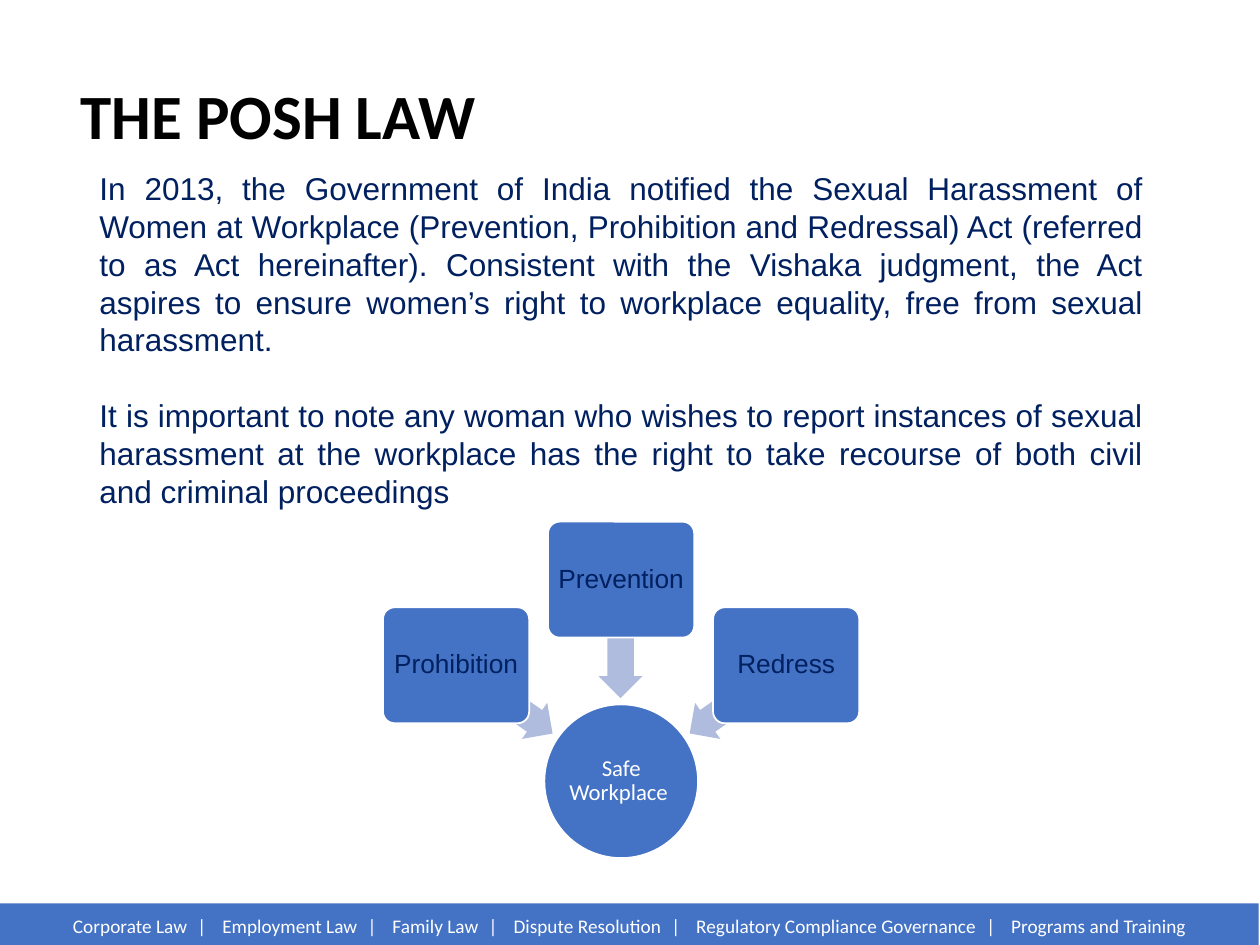
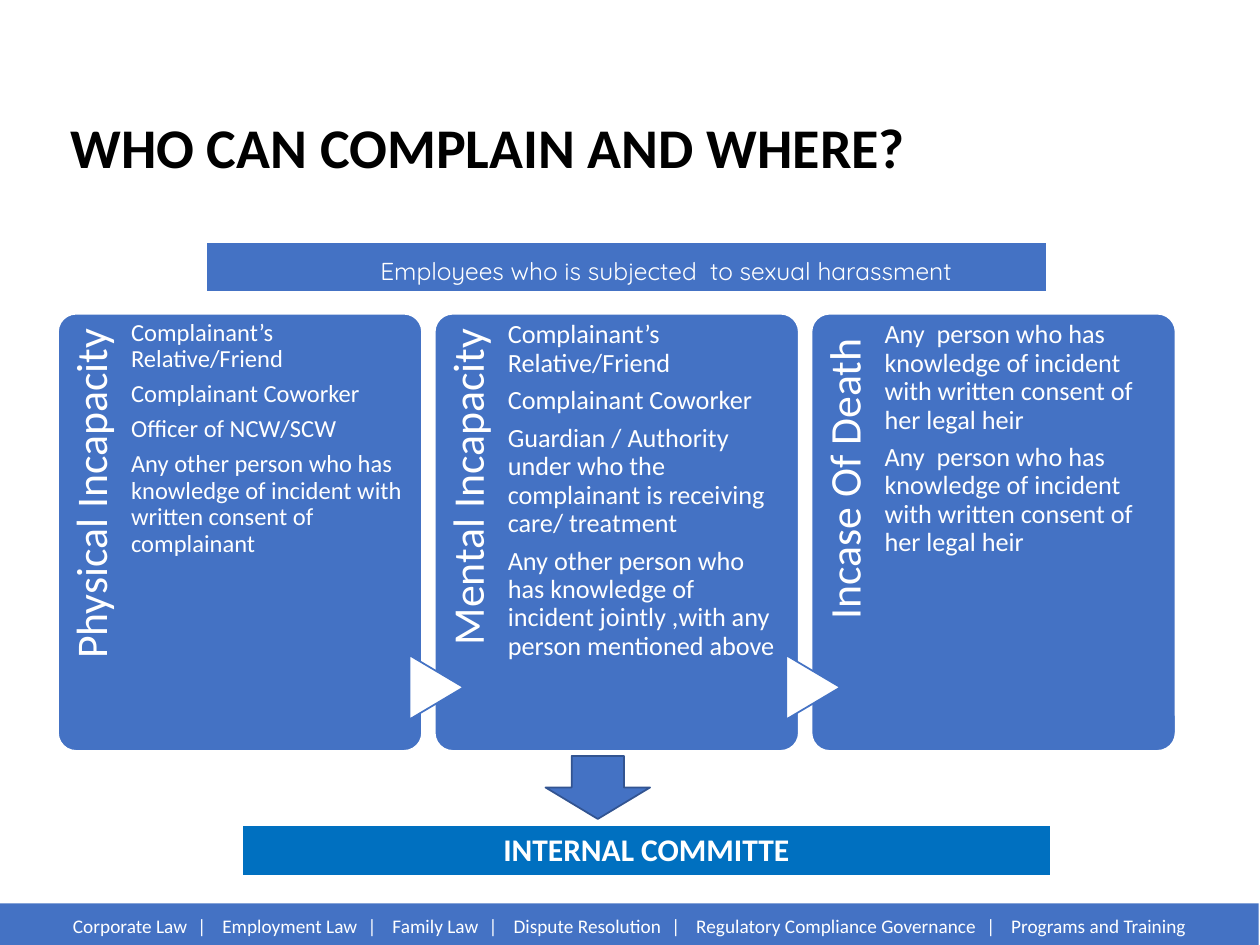
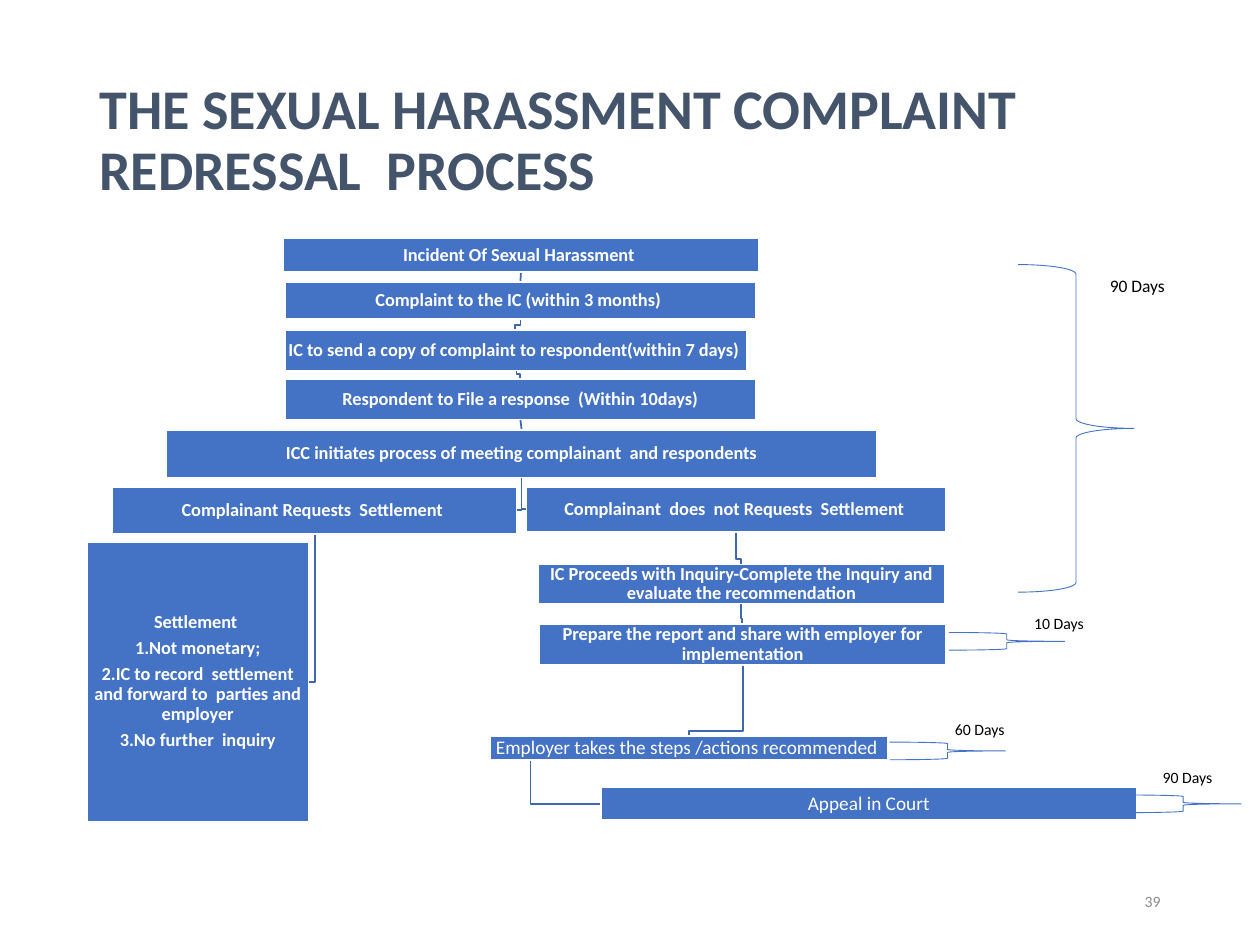
import dataclasses

import lxml.etree
import pptx
import pptx.dml.color
import pptx.enum.shapes
import pptx.enum.text
import pptx.oxml.ns
import pptx.util

SCALE = 9144  # EMU in one px, 100 px to the inch
KIND = pptx.enum.shapes.MSO_SHAPE
ALIGN = pptx.enum.text.PP_ALIGN
ANCHOR = pptx.enum.text.MSO_ANCHOR
Pt = pptx.util.Pt


@dataclasses.dataclass(frozen=True)
class Theme:
    blue: str = "4472C4"
    deep: str = "0070C0"
    pale: str = "B0BCDE"
    edge: str = "325491"
    link: str = "3E67B2"
    navy: str = "002060"
    slate: str = "44546A"
    gray: str = "8C8C8C"
    white: str = "FFFFFF"
    black: str = "000000"
    font: str = "Calibri"
    plain: str = "Arial"
    round: str = "Quicksand"
    title: int = 32
    head: int = 25
    body: int = 18
    label: int = 15
    note: int = 14
    hub: int = 13
    foot: int = 11
    step: float = 10.5
    days: int = 9
    tight: float = 0.9
    after: float = 0.35


T = Theme()

FOOT = ["Corporate Law", "Employment Law", "Family Law", "Dispute Resolution",
        "Regulatory Compliance Governance", "Programs and Training"]

LAW = [
    "In 2013, the Government of India notified the Sexual Harassment of Women at Workplace "
    "(Prevention, Prohibition and Redressal) Act (referred to as Act hereinafter). Consistent "
    "with the Vishaka judgment, the Act aspires to ensure women’s right to workplace equality, "
    "free from sexual harassment.",
    "It is important to note any woman who wishes to report instances of sexual harassment at "
    "the workplace has the right to take recourse of both civil and criminal proceedings",
]
# label, box top, arrow left, arrow top, arrow turn
AIMS = [("Prohibition", 482, 354, 538, 215),
        ("Prevention", 414, 446, 490, 270),
        ("Redress", 482, 539, 538, 325)]

HEIR = "Any  person who has knowledge of incident with written consent of her legal heir"
# heading, type size, top inset, lines
CARDS = [
    ("Physical Incapacity", T.note, 5, [
        "Complainant’s Relative/Friend", "Complainant Coworker", "Officer of NCW/SCW",
        "Any other person who has knowledge of incident with written consent of complainant"]),
    ("Mental Incapacity", T.label, 6, [
        "Complainant’s Relative/Friend", "Complainant Coworker",
        "Guardian / Authority under who the complainant is receiving care/ treatment",
        "Any other person who has knowledge of incident jointly ,with any person mentioned above"]),
    ("Incase Of Death ", T.label, 6, [HEIR, HEIR]),
]

STEPS = {
    "incident": ((225, 189, 377, 27), ["Incident Of Sexual Harassment "]),
    "complaint": ((226, 224, 374, 29), ["Complaint to the IC (within 3 months) "]),
    "copy": ((226, 262, 367, 32),
             ["IC to send a copy of complaint to respondent(within 7 days) "]),
    "response": ((226, 301, 374, 32), ["Respondent to File a response  (Within 10days)"]),
    "meeting": ((132, 341, 564, 38),
                ["ICC initiates process of meeting complainant  and respondents"]),
    "settle": ((89, 387, 321, 37), ["Complainant Requests  Settlement "]),
    "terms": ((69, 430, 176, 222), [
        "Settlement ", "1.Not monetary;",
        "2.IC to record  settlement and forward to  parties and employer",
        "3.No further  inquiry"]),
    "refuse": ((418, 387, 333, 35), ["Complainant  does  not Requests  Settlement "]),
    "inquiry": ((427, 448, 323, 31),
                ["IC Proceeds with Inquiry-Complete the Inquiry and evaluate the recommendation"]),
    "report": ((428, 495, 323, 33),
               ["Prepare the report and share with employer for implementation"]),
    "action": ((389, 584, 316, 19), ["Employer takes the steps /actions recommended "]),
    "appeal": ((477, 625, 425, 26), ["Appeal in Court"]),
}
LIGHT = {"action", "appeal"}
STRAIGHT = [("incident", "complaint"), ("response", "meeting")]
DOWN = [("complaint", "copy"), ("copy", "response"), ("refuse", "inquiry"),
        ("inquiry", "report"), ("report", "action")]
# from, to, share of the width where the line leaves, side where it arrives
ASIDE = [("meeting", "settle", 0.5, "right"), ("meeting", "refuse", 0.5, "left"),
         ("settle", "terms", 0.5, "right"), ("action", "appeal", 0.1, "left")]
# brace, label place, label, type size
SPANS = [((808, 210, 92, 260), (871, 213, 75, 27), "90 Days", 10),
         ((753, 502, 92, 14), (811, 482, 83, 25), "10 Days", T.days),
         ((706, 589, 92, 14), (748, 566, 83, 25), "60 Days", T.days),
         ((893, 631, 92, 14), (913, 604, 83, 25), "90 Days", T.days)]


def px(*nums):
    return [pptx.util.Emu(round(n * SCALE)) for n in nums]


def rgb(code):
    return pptx.dml.color.RGBColor.from_string(code)


def stroke(line, color, width):
    line.color.rgb = rgb(color)
    line.width = Pt(width)


def add_run(para, text, size, color, font, bold=False):
    run = para.add_run()
    run.text = text
    run.font.size, run.font.bold, run.font.name = Pt(size), bold, font
    run.font.color.rgb = rgb(color)
    return run


def write(shape, lines, size, color=T.white, font=T.font, bold=False, align=ALIGN.LEFT,
          inset=(10, 5, 10, 5), anchor=ANCHOR.TOP, lead=None, before=0, after=0):
    """Fill a shape with paragraphs; before skips the first one."""
    frame = shape.text_frame
    frame.word_wrap = True
    frame.vertical_anchor = anchor
    (frame.margin_left, frame.margin_top,
     frame.margin_right, frame.margin_bottom) = px(*inset)
    for i, text in enumerate(lines):
        para = frame.add_paragraph() if i else frame.paragraphs[0]
        para.alignment = align
        if lead:
            para.line_spacing = lead
        if i and before:
            para.space_before = Pt(before)
        if after:
            para.space_after = Pt(round(size * after, 2))
        add_run(para, text, size, color, font, bold)


def add_text(slide, place, lines, size, turn=0, **style):
    box = slide.shapes.add_textbox(*px(*place))
    box.rotation = turn
    write(box, lines, size, **style)


def add_form(slide, kind, place, fill=None, line=None, width=1, adjust=(), turn=0):
    form = slide.shapes.add_shape(kind, *px(*place))
    form.shadow.inherit = False
    form.rotation = turn
    for i, value in enumerate(adjust):
        form.adjustments[i] = value
    if fill:
        form.fill.solid()
        form.fill.fore_color.rgb = rgb(fill)
    else:
        form.fill.background()
    if line:
        stroke(form.line, line, width)
    else:
        form.line.fill.background()
    return form


def add_title(slide, place, text, color=T.black, size=T.title):
    add_text(slide, place, [text], size, color=color, bold=True,
             anchor=ANCHOR.MIDDLE, lead=T.tight)


def add_foot(slide):
    band = add_form(slide, KIND.RECTANGLE, (0, 717, 999, 36), T.blue)
    write(band, FOOT[:1], T.foot, align=ALIGN.CENTER, anchor=ANCHOR.MIDDLE)
    para = band.text_frame.paragraphs[0]
    for name in FOOT[1:]:
        bar = add_run(para, " | ", T.foot, T.white, T.font)
        bar.font._element.set("spc", "332")
        add_run(para, name, T.foot, T.white, T.font)


def add_bar(slide, place, fill, text=None):
    """One-cell table with white borders, the lower one thick."""
    table = slide.shapes.add_table(1, 1, *px(*place)).table
    table.first_row = table.horz_banding = False
    cell = table.cell(0, 0)
    props = cell._tc.get_or_add_tcPr()
    tag = pptx.oxml.ns.qn
    for side, width in (("L", 1), ("R", 1), ("T", 1), ("B", 3)):
        edge = lxml.etree.SubElement(props, tag("a:ln" + side), w=str(Pt(width)))
        paint = lxml.etree.SubElement(edge, tag("a:solidFill"))
        lxml.etree.SubElement(paint, tag("a:srgbClr"), val=T.white)
    cell.fill.solid()
    cell.fill.fore_color.rgb = rgb(fill)
    if text:
        para = cell.text_frame.paragraphs[0]
        para.alignment = ALIGN.CENTER
        add_run(para, text, T.body, T.white, T.font, True)


def send_back(shape):
    shape.element.getparent().insert(2, shape.element)


def add_path(slide, points):
    start, *rest = [px(*point) for point in points]
    pen = slide.shapes.build_freeform(*start)
    pen.add_line_segments(rest, close=False)
    path = pen.convert_to_shape()
    path.shadow.inherit = False
    path.fill.background()
    stroke(path.line, T.link, 1)
    send_back(path)


def add_link(slide, start, end):
    link = slide.shapes.add_connector(pptx.enum.shapes.MSO_CONNECTOR.STRAIGHT, 0, 0, 0, 0)
    link.begin_connect(start, 2)
    link.end_connect(end, 0)
    stroke(link.line, T.link, 1)
    lxml.etree.SubElement(link.element.spPr, pptx.oxml.ns.qn("a:effectLst"))
    send_back(link)


def leave(name, share=0.5):
    x, y, w, h = STEPS[name][0]
    return round(x + w * share), y + h


def draw_law(slide):
    add_title(slide, (54, 22, 862, 145), "THE POSH LAW", size=36)
    add_text(slide, (69, 129, 848, 283), LAW, T.body, color=T.navy, font=T.plain,
             align=ALIGN.JUSTIFY, lead=Pt(21.65), before=21.65)
    style = dict(align=ALIGN.CENTER, anchor=ANCHOR.MIDDLE, lead=T.tight, after=T.after)
    hub = add_form(slide, KIND.OVAL, (432, 559, 122, 122), T.blue, T.white)
    write(hub, ["Safe Workplace "], T.hub, inset=(1,) * 4, **style)
    for i, (name, top, left, high, turn) in enumerate(AIMS):
        add_form(slide, KIND.LEFT_ARROW, (left, high, 93, 35), T.pale,
                 adjust=(0.6, 0.5), turn=turn)
        box = add_form(slide, KIND.ROUNDED_RECTANGLE, (304 + 131 * i, top, 116, 92),
                       T.blue, T.white, adjust=(0.1,))
        write(box, [name], T.label, color=T.navy, font=T.plain, inset=(3,) * 4, **style)
    add_foot(slide)


def draw_who(slide):
    add_title(slide, (46, 62, 903, 114), "WHO CAN COMPLAIN AND WHERE?")
    style = dict(lead=T.tight, after=T.after)
    for i, (head, size, top, lines) in enumerate(CARDS):
        x = 46 + 299 * i
        add_form(slide, KIND.ROUNDED_RECTANGLE, (x, 249, 289, 347), T.blue, T.white,
                 adjust=(0.05,))
        add_text(slide, (x - 113, 362, 284, 58), [head], T.head, turn=270,
                 align=ALIGN.RIGHT, inset=(0, 9, 12, 0), **style)
        if i:
            add_form(slide, KIND.FLOWCHART_EXTRACT, (x - 24, 524, 51, 43), T.white, T.blue,
                     turn=90)
        add_text(slide, (x + 58, 249, 215, 347), lines, size, inset=(0, top, 0, 0), **style)
    add_bar(slide, (164, 192, 667, 41), T.blue)
    add_bar(slide, (192, 655, 642, 41), T.deep, "INTERNAL COMMITTE")
    add_text(slide, (292, 201, 606, 31), ["Employees who is subjected  to sexual harassment"],
             T.note, font=T.round, **style)
    add_form(slide, KIND.DOWN_ARROW, (433, 600, 83, 50), T.blue, T.edge)
    add_foot(slide)


def draw_flow(slide):
    add_title(slide, (69, 40, 862, 145),
              "THE SEXUAL HARASSMENT COMPLAINT REDRESSAL  PROCESS", T.slate)
    add_text(slide, (706, 695, 225, 40), ["39"], T.days, color=T.gray,
             align=ALIGN.RIGHT, anchor=ANCHOR.MIDDLE)
    boxes = {}
    for name, (place, lines) in STEPS.items():
        boxes[name] = add_form(slide, KIND.RECTANGLE, place, T.blue, T.white)
        write(boxes[name], lines, T.foot if name in LIGHT else T.step,
              bold=name not in LIGHT, align=ALIGN.CENTER, anchor=ANCHOR.MIDDLE,
              inset=(1,) * 4, lead=T.tight, after=T.after)
    for start, end in STRAIGHT:
        add_link(slide, boxes[start], boxes[end])
    for start, end in DOWN:
        x, y = leave(start)
        left, top, wide, _ = STEPS[end][0]
        mid, bend = left + wide // 2, top - 4
        add_path(slide, [(x, y), (x, bend), (mid, bend), (mid, top)])
    for start, end, share, side in ASIDE:
        x, y = leave(start, share)
        left, top, wide, high = STEPS[end][0]
        mid = top + high // 2
        add_path(slide, [(x, y), (x, mid), (left + wide * (side == "right"), mid)])
    for brace, place, label, size in SPANS:
        add_form(slide, KIND.RIGHT_BRACE, brace, line=T.blue, width=0.5)
        add_text(slide, place, [label], size, color=T.black)


def main():
    deck = pptx.Presentation()
    deck.slide_width, deck.slide_height = px(1000, 750)
    for draw in (draw_law, draw_who, draw_flow):
        draw(deck.slides.add_slide(deck.slide_layouts[6]))
    deck.save("out.pptx")


if __name__ == "__main__":
    main()
